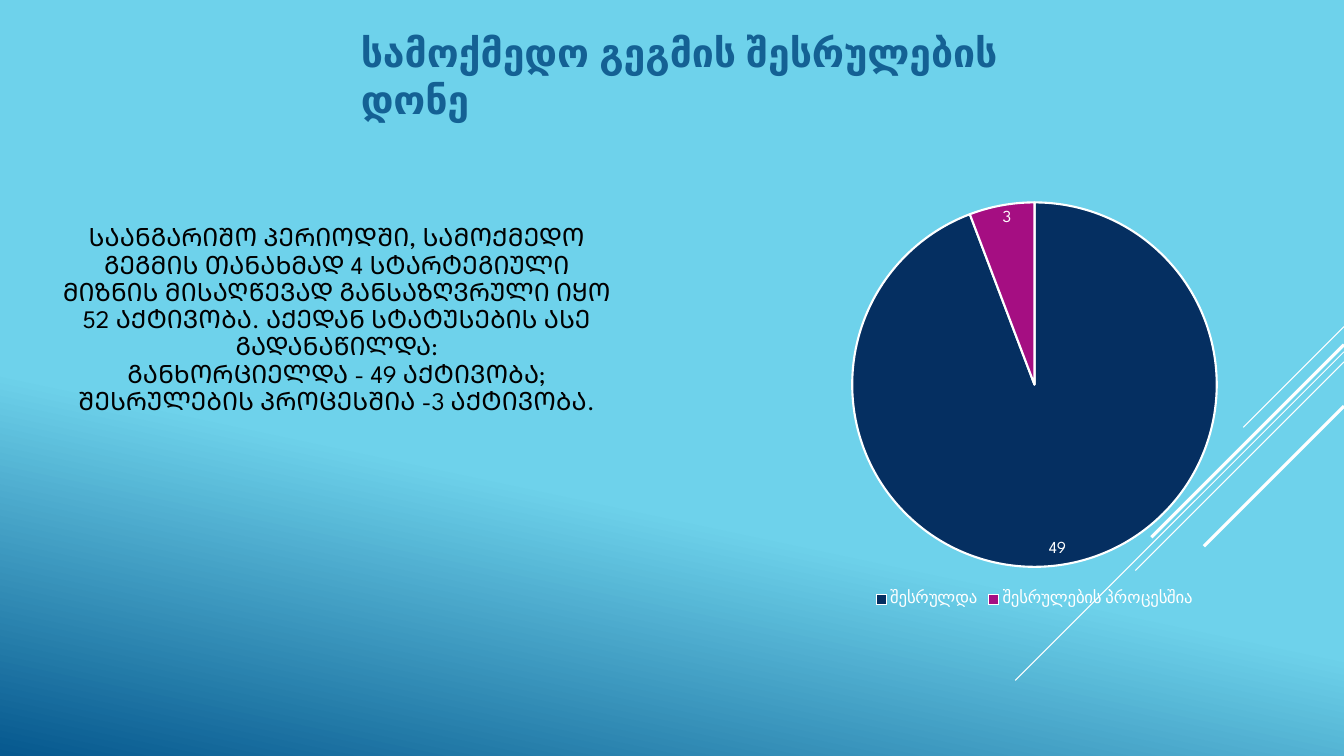
from lxml import etree
from pptx import Presentation
from pptx.chart import data as chart_data
from pptx.dml.color import RGBColor
from pptx.enum import chart as ch, shapes, text
from pptx.oxml.ns import qn
from pptx.util import Inches, Pt

FONT = "League Spartan"
WHITE = RGBColor(0xFF, 0xFF, 0xFF)
BLACK = RGBColor(0x00, 0x00, 0x00)
SKY = RGBColor(0x6E, 0xD2, 0xEB)
DEEP_BLUE = RGBColor(0x06, 0x58, 0x8E)
HEADING_BLUE = RGBColor(0x14, 0x61, 0x94)
NAVY = RGBColor(0x05, 0x2F, 0x61)
MAGENTA = RGBColor(0xA5, 0x0E, 0x82)

HEADING = "სამოქმედო გეგმის შესრულების დონე"
SUMMARY = [
    "ᲡᲐᲐᲜᲒᲐᲠᲘᲨᲝ ᲞᲔᲠᲘᲝᲓᲨᲘ, ᲡᲐᲛᲝᲥᲛᲔᲓᲝ ᲒᲔᲒᲛᲘᲡ ᲗᲐᲜᲐᲮᲛᲐᲓ 4 ᲡᲢᲐᲠᲢᲔᲒᲘᲣᲚᲘ ᲛᲘᲖᲜᲘᲡ "
    "ᲛᲘᲡᲐᲦᲬᲔᲕᲐᲓ ᲒᲐᲜᲡᲐᲖᲦᲕᲠᲣᲚᲘ ᲘᲧᲝ 52 ᲐᲥᲢᲘᲕᲝᲑᲐ. ᲐᲥᲔᲓᲐᲜ ᲡᲢᲐᲢᲣᲡᲔᲑᲘᲡ ᲐᲡᲔ ᲒᲐᲓᲐᲜᲐᲬᲘᲚᲓᲐ:",
    "ᲒᲐᲜᲮᲝᲠᲪᲘᲔᲚᲓᲐ - 49 ᲐᲥᲢᲘᲕᲝᲑᲐ;",
    "ᲨᲔᲡᲠᲣᲚᲔᲑᲘᲡ ᲞᲠᲝᲪᲔᲡᲨᲘᲐ -3 ᲐᲥᲢᲘᲕᲝᲑᲐ.",
]
STATUSES = [("შესრულდა", 49, NAVY), ("შესრულების პროცესშია", 3, MAGENTA)]

SLIDE_WIDTH, SLIDE_HEIGHT = 13.33, 7.5
# Each diagonal starts on the right edge: top, run (down and to the left), weight
DIAGONALS = [(3.24, 1.0, 0.75), (3.49, 3.26, 0.75), (3.59, 2.07, 0.75),
             (3.42, 1.91, 2.25), (4.03, 1.39, 2.25)]


def set_font(font, size, color, bold=False):
    font.name, font.size, font.bold = FONT, Pt(size), bold
    font.color.rgb = color


def write(frame, lines, size, color, bold=False,
          align=text.PP_ALIGN.LEFT, spacing=1.0):
    frame.word_wrap = True
    for index, line in enumerate(lines):
        paragraph = frame.paragraphs[0] if index == 0 else frame.add_paragraph()
        paragraph.alignment, paragraph.line_spacing = align, spacing
        run = paragraph.add_run()
        run.text = line
        set_font(run.font, size, color, bold)


def paint_background(slide):
    fill = slide.background.fill
    fill.gradient()
    fill.gradient_angle = 360 - 102
    for stop, position, color in zip(fill.gradient_stops, (0.63, 1), (SKY, DEEP_BLUE)):
        stop.position = position
        stop.color.rgb = color


def draw_diagonals(slide):
    for top, run, weight in DIAGONALS:
        diagonal = slide.shapes.add_connector(
            shapes.MSO_CONNECTOR.STRAIGHT, Inches(SLIDE_WIDTH), Inches(top),
            Inches(SLIDE_WIDTH - run), Inches(top + run))
        diagonal.line.color.rgb = WHITE
        diagonal.line.width = Pt(weight)
        etree.SubElement(diagonal._element.spPr, qn("a:effectLst"))


def place_summary(slide):
    summary = slide.shapes.title
    summary.left, summary.top = Inches(0.52), Inches(1.46)
    summary.width, summary.height = Inches(5.64), Inches(2.71)
    frame = summary.text_frame
    frame.auto_size = text.MSO_AUTO_SIZE.NONE
    frame.vertical_anchor = text.MSO_ANCHOR.MIDDLE
    frame.margin_top = Inches(0.78)
    write(frame, SUMMARY, 18, BLACK, align=text.PP_ALIGN.CENTER, spacing=0.9)


def add_status_pie(slide):
    statuses = chart_data.CategoryChartData()
    statuses.categories = [name for name, _, _ in STATUSES]
    statuses.add_series("Series 1", [count for _, count, _ in STATUSES])
    pie = slide.shapes.add_chart(
        ch.XL_CHART_TYPE.PIE, Inches(7.19), Inches(1.87),
        Inches(6.14), Inches(4.2), statuses).chart
    pie.has_title = False
    set_font(pie.font, 10, WHITE)
    pie.has_legend = True
    pie.legend.position = ch.XL_LEGEND_POSITION.BOTTOM
    pie.legend.include_in_layout = False
    set_font(pie.legend.font, 12, WHITE)

    plot = pie.plots[0]
    plot.vary_by_categories = True
    for index, (_, _, color) in enumerate(STATUSES):
        slice_format = plot.series[0].points[index].format
        slice_format.fill.solid()
        slice_format.fill.fore_color.rgb = color
        slice_format.line.color.rgb = WHITE
        slice_format.line.width = Pt(1.5)
    labels = plot.series[0].data_labels
    labels.show_value = True
    labels.position = ch.XL_LABEL_POSITION.INSIDE_END
    set_font(labels.font, 12, WHITE)


def add_heading(slide):
    heading = slide.shapes.add_textbox(
        Inches(3.48), Inches(0.23), Inches(7.17), Inches(0.57))
    write(heading.text_frame, [HEADING], 28, HEADING_BLUE, bold=True)


def main():
    deck = Presentation()
    deck.slide_width, deck.slide_height = Inches(SLIDE_WIDTH), Inches(SLIDE_HEIGHT)
    slide = deck.slides.add_slide(deck.slide_layouts.get_by_name("Title Only"))
    paint_background(slide)
    draw_diagonals(slide)
    place_summary(slide)
    add_status_pie(slide)
    add_heading(slide)
    deck.save("out.pptx")


if __name__ == "__main__":
    main()
